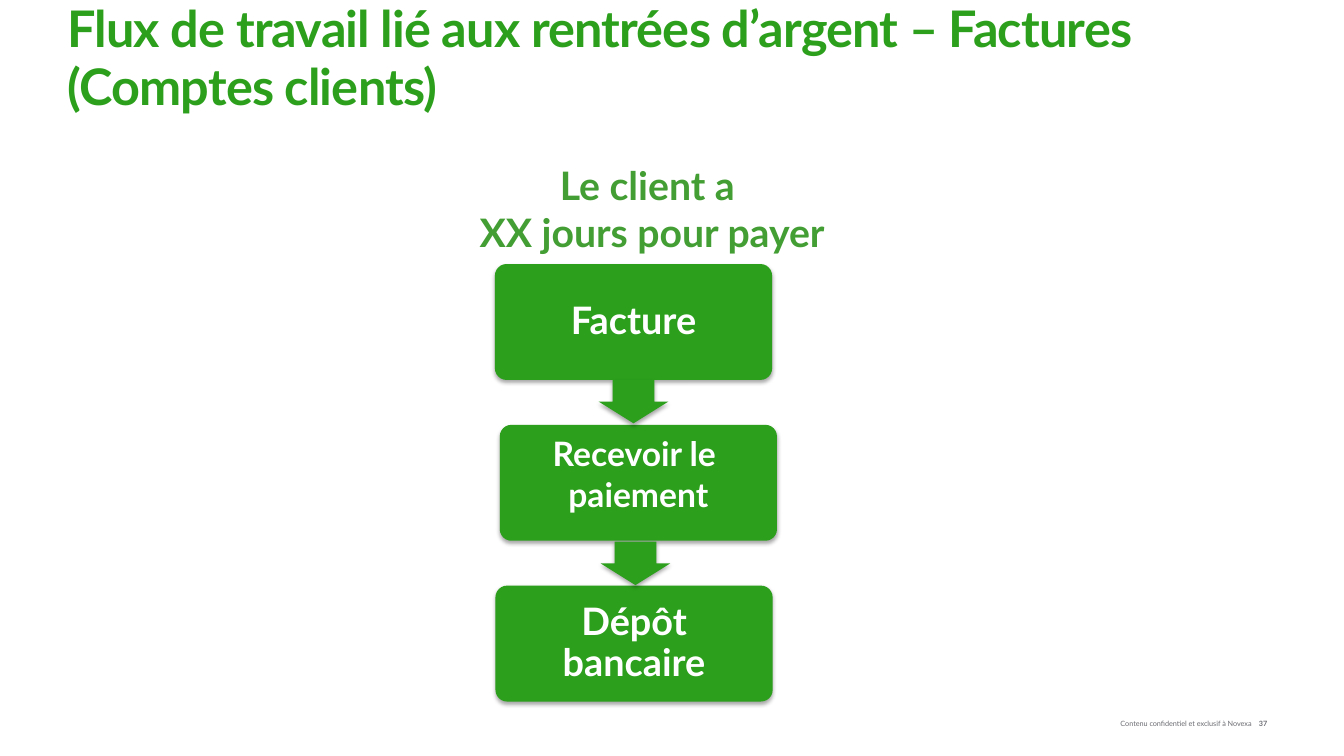
from dataclasses import dataclass

from lxml import etree
from pptx import Presentation
from pptx.dml.color import RGBColor
from pptx.enum.shapes import MSO_SHAPE
from pptx.enum.text import MSO_ANCHOR, PP_ALIGN
from pptx.oxml import parse_xml
from pptx.util import Pt

ROUNDED, DOWN_ARROW = MSO_SHAPE.ROUNDED_RECTANGLE, MSO_SHAPE.DOWN_ARROW
TOP, MIDDLE = MSO_ANCHOR.TOP, MSO_ANCHOR.MIDDLE
LEFT, CENTER, RIGHT = PP_ALIGN.LEFT, PP_ALIGN.CENTER, PP_ALIGN.RIGHT
DRAWING_NS = "http://schemas.openxmlformats.org/drawingml/2006/main"


@dataclass(frozen=True)
class Theme:
    font: str = "Lato"
    green: str = "2CA01C"
    caption_green: str = "439E33"
    white: str = "FFFFFF"
    grey: str = "6B6C72"
    title_size: float = 36
    caption_size: float = 28
    step_size: float = 27
    small_step_size: float = 24
    footer_size: float = 5.2


THEME = Theme()


def set_frame(frame, anchor, margin_x, margin_y):
    frame.word_wrap = True
    frame.vertical_anchor = anchor
    frame.margin_left = frame.margin_right = Pt(margin_x)
    frame.margin_top = frame.margin_bottom = Pt(margin_y)


def add_words(paragraph, words, size, color, align, bold=True):
    paragraph.alignment = align
    run = paragraph.add_run()
    run.text = words
    run.font.name = THEME.font
    run.font.size = Pt(size)
    run.font.bold = bold
    run.font.color.rgb = RGBColor.from_string(color)
    return run


def add_text_box(slide, box, anchor, margin_x, margin_y):
    frame = slide.shapes.add_textbox(*map(Pt, box)).text_frame
    set_frame(frame, anchor, margin_x, margin_y)
    return frame


def add_green_shape(slide, preset, box, adjustments):
    shape = slide.shapes.add_shape(preset, *map(Pt, box))
    for index, value in enumerate(adjustments):
        shape.adjustments[index] = value
    shape.fill.solid()
    shape.fill.fore_color.rgb = RGBColor.from_string(THEME.green)
    shape.line.fill.background()
    # Soft shadow falling straight down
    shape.shadow.inherit = False
    effects = shape.element.spPr.find(f"{{{DRAWING_NS}}}effectLst")
    effects.append(parse_xml(
        f'<a:outerShdw xmlns:a="{DRAWING_NS}" blurRad="{Pt(3.1)}" dist="{Pt(1.8)}" '
        'dir="5400000" rotWithShape="0"><a:srgbClr val="000000">'
        '<a:alpha val="35000"/></a:srgbClr></a:outerShdw>'))
    return shape


def build_title(slide, box):
    title = slide.shapes.title
    title.left, title.top, title.width, title.height = map(Pt, box)
    set_frame(title.text_frame, MIDDLE, 7.2, 3.6)
    paragraph = title.text_frame.paragraphs[0]
    paragraph.line_spacing = 0.95
    run = add_words(
        paragraph,
        "Flux de travail lié aux rentrées d’argent\u00a0– Factures (Comptes clients)",
        THEME.title_size, THEME.green, LEFT)
    run.font._element.set("spc", "-60")


def build_caption(slide, box):
    paragraph = add_text_box(slide, box, TOP, 0, 3.6).paragraphs[0]
    style = (THEME.caption_size, THEME.caption_green, CENTER)
    add_words(paragraph, "Le client a ", *style)
    paragraph.add_line_break()
    add_words(paragraph, "XX\u00a0jours pour payer", *style)


def build_workflow(slide, box):
    left, top, width, height = box
    step_height = 82.8
    pitch = (height - step_height) / 2
    arrow_width, arrow_height = 49.7, 31
    # Each step: lines, offset from the left, size, anchor, margins, line spacing
    steps = [
        (["Facture"], 0, THEME.step_size, MIDDLE, 9, 7.9, 0.9),
        (["Recevoir le ", "paiement"], 3.5, THEME.small_step_size, TOP, 7.2, 3.6, 1.0),
        (["Dépôt bancaire"], 0.4, THEME.step_size, MIDDLE, 9, 7.9, 0.9),
    ]
    for index, (lines, offset, size, anchor, margin_x, margin_y, spacing) in enumerate(steps):
        step_top = top + index * pitch
        step = add_green_shape(
            slide, ROUNDED, (left + offset, step_top, width, step_height), [0.1])
        frame = step.text_frame
        set_frame(frame, anchor, margin_x, margin_y)
        for number, line in enumerate(lines):
            paragraph = frame.add_paragraph() if number else frame.paragraphs[0]
            paragraph.line_spacing = spacing
            add_words(paragraph, line, size, THEME.white, CENTER)

    # Arrows filling the gaps between steps
    for index in range(len(steps) - 1):
        arrow_left = left + (width - arrow_width) / 2 + index * 1.4
        arrow_top = top + step_height + index * (pitch + 0.7)
        add_green_shape(
            slide, DOWN_ARROW, (arrow_left, arrow_top, arrow_width, arrow_height), [0.6, 0.5])


def build_footer(slide, box):
    left, top, width, height = box
    number_width = 28
    notice_width = width - number_width
    notice = add_text_box(slide, (left, top, notice_width, height), MIDDLE, 0, 2.9)
    add_words(notice.paragraphs[0], "Contenu confidentiel et exclusif à Novexa",
              THEME.footer_size, THEME.grey, RIGHT, bold=False)
    number = add_text_box(
        slide, (left + notice_width, top, number_width, height), MIDDLE, 5, 2.9)
    paragraph = number.paragraphs[0]
    add_words(paragraph, "", THEME.footer_size, THEME.grey, LEFT)
    add_page_number(paragraph)


def add_page_number(paragraph):
    run = paragraph.runs[0]
    run.text = "37"
    etree.cleanup_namespaces(run._r)


def main():
    presentation = Presentation()
    presentation.slide_width, presentation.slide_height = Pt(960), Pt(540)
    slide = presentation.slides.add_slide(presentation.slide_layouts[5])
    build_title(slide, (41, 20.9, 901.4, 43.2))
    build_caption(slide, (293, 111.6, 345.6, 72))
    build_workflow(slide, (353.5, 188.6, 198, 312.5))
    build_footer(slide, (702, 509.8, 220.3, 14.4))
    presentation.save("out.pptx")


if __name__ == "__main__":
    main()
